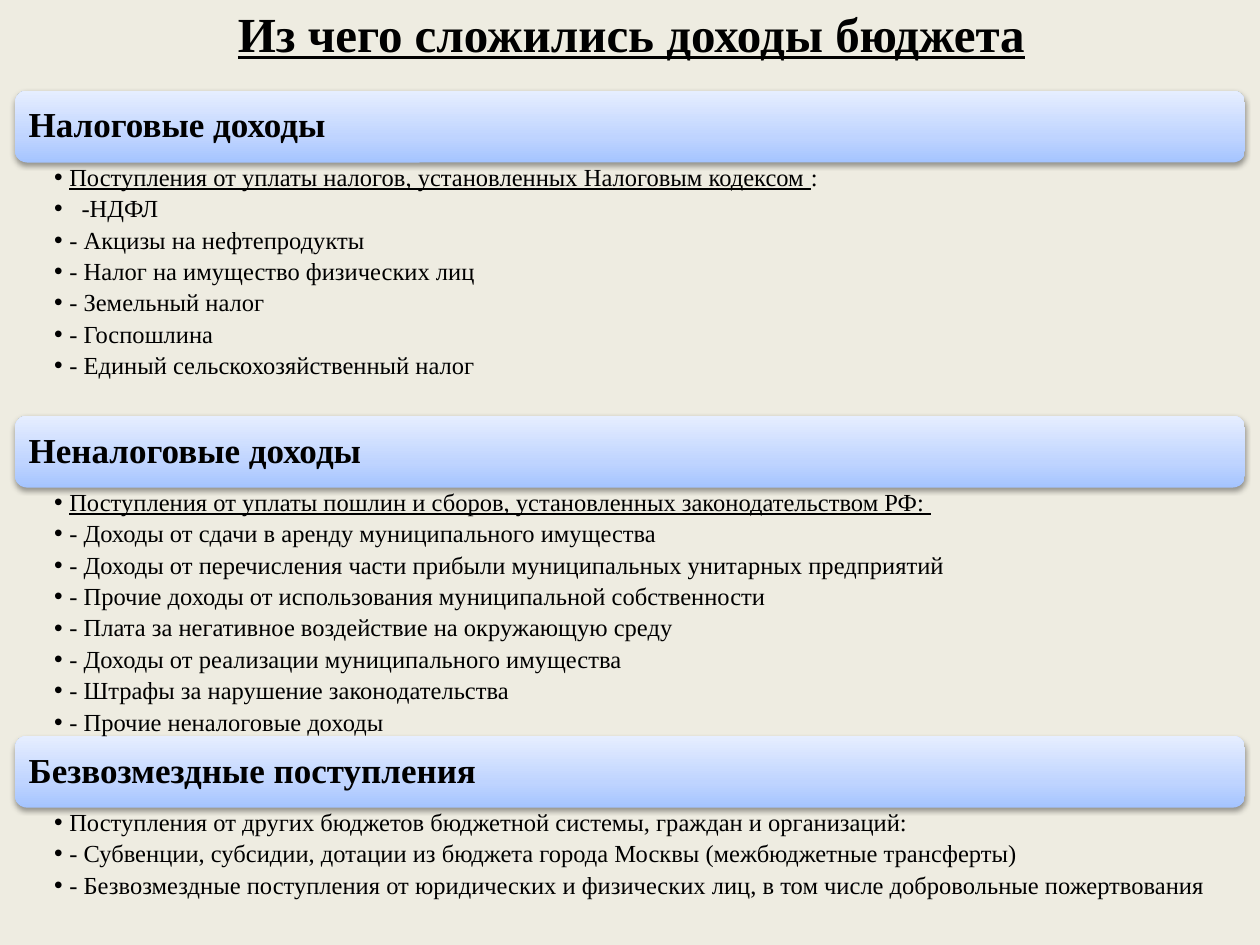
from copy import deepcopy
from dataclasses import dataclass

from lxml import etree
from pptx import Presentation
from pptx import util as u
from pptx.dml.color import RGBColor
from pptx.enum import shapes, text
from pptx.oxml.ns import qn

FONT = "Times New Roman"
LEFT, WIDTH, BAR_HEIGHT = 0.12, 9.76, 0.57
BAR_STOPS = [(0, "A4C4FF"), (0.35, "BFD4FF"), (1, "E6EEFF")]


@dataclass
class Section:
    heading: str
    top: float
    list_height: float
    lead: str
    items: list[str]
    lead_end: str = ""
    lead_underlined: bool = True


SECTIONS = [
    Section("Налоговые доходы", 0.72, 2.01,
            "Поступления от уплаты налогов, установленных Налоговым кодексом ",
            ["  -НДФЛ", "- Акцизы на нефтепродукты",
             "- Налог на имущество физических лиц", "- Земельный налог",
             "- Госпошлина", "- Единый сельскохозяйственный налог"],
            lead_end=":"),
    Section("Неналоговые доходы", 3.3, 1.96,
            "Поступления от уплаты пошлин и сборов, установленных законодательством РФ: ",
            ["- Доходы от сдачи в аренду муниципального имущества",
             "- Доходы от перечисления части прибыли муниципальных унитарных предприятий",
             "- Прочие доходы от использования муниципальной собственности",
             "- Плата за негативное воздействие на окружающую среду",
             "- Доходы от реализации муниципального имущества",
             "- Штрафы за нарушение законодательства",
             "- Прочие неналоговые доходы"]),
    Section("Безвозмездные поступления", 5.84, 1.0,
            "Поступления от других бюджетов бюджетной системы, граждан и организаций:",
            ["- Субвенции, субсидии, дотации из бюджета города Москвы (межбюджетные трансферты)",
             "- Безвозмездные поступления от юридических и физических лиц, "
             "в том числе добровольные пожертвования"],
            lead_underlined=False),
]


def color(value: str) -> RGBColor:
    return RGBColor.from_string(value)


def add_span(para, wording: str, size=14, bold=False, underline=False) -> None:
    span = para.add_run()
    span.text = wording
    span.font.name, span.font.size = FONT, u.Pt(size)
    span.font.bold, span.font.underline = bold, underline
    span.font.color.rgb = color("000000")


def place(box, left: float, top: float, width: float, height: float) -> None:
    box.left, box.top = u.Inches(left), u.Inches(top)
    box.width, box.height = u.Inches(width), u.Inches(height)


def set_frame(box, anchor, left: float, right: float, edge: float):
    frame = box.text_frame
    frame.word_wrap, frame.auto_size = True, text.MSO_AUTO_SIZE.NONE
    frame.vertical_anchor = anchor
    frame.margin_left, frame.margin_right = u.Inches(left), u.Inches(right)
    frame.margin_top = frame.margin_bottom = u.Inches(edge)
    return frame


def add_shadow(shape) -> None:
    shape.shadow.inherit = False
    effects = shape._element.spPr.find(qn("a:effectLst"))
    shadow = etree.SubElement(effects, qn("a:outerShdw"), blurRad="40000",
                              dist="20000", dir="5400000", rotWithShape="0")
    tint = etree.SubElement(shadow, qn("a:srgbClr"), val="000000")
    etree.SubElement(tint, qn("a:alpha"), val="38000")


def add_bar(page, section: Section) -> None:
    bar = page.shapes.add_shape(
        shapes.MSO_SHAPE.ROUNDED_RECTANGLE, u.Inches(LEFT), u.Inches(section.top),
        u.Inches(WIDTH), u.Inches(BAR_HEIGHT))
    bar.fill.gradient()
    bar.fill.gradient_angle = 90
    stops = bar._element.spPr.find(".//" + qn("a:gsLst"))
    stops.insert(1, deepcopy(stops[0]))
    for stop, (position, value) in zip(bar.fill.gradient_stops, BAR_STOPS):
        stop.position, stop.color.rgb = position, color(value)
    bar.line.fill.background()
    add_shadow(bar)
    para = set_frame(bar, text.MSO_ANCHOR.MIDDLE, 0.08, 0.08, 0.08).paragraphs[0]
    para.alignment, para.line_spacing = text.PP_ALIGN.LEFT, 0.9
    add_span(para, section.heading, size=20, bold=True)


def format_bullet(para) -> None:
    para.level, para.alignment = 1, text.PP_ALIGN.LEFT
    para.line_spacing, para.space_before, para.space_after = 0.9, u.Pt(0), u.Pt(2.8)
    props = para._p.get_or_add_pPr()
    props.set("marL", str(u.Inches(0.12)))
    props.set("indent", str(-u.Inches(0.12)))
    etree.SubElement(props, qn("a:buChar"), char="•")


def fill_list(box, section: Section) -> None:
    place(box, LEFT, section.top + BAR_HEIGHT, WIDTH, section.list_height)
    frame = set_frame(box, text.MSO_ANCHOR.TOP, 0.31, 0.11, 0.02)
    lead = frame.paragraphs[0]
    format_bullet(lead)
    add_span(lead, section.lead, underline=section.lead_underlined)
    if section.lead_end:
        add_span(lead, section.lead_end)
    for item in section.items:
        para = frame.add_paragraph()
        format_bullet(para)
        add_span(para, item)


def main() -> None:
    deck = Presentation()
    deck.slide_width, deck.slide_height = u.Inches(10), u.Inches(7.5)
    page = deck.slides.add_slide(deck.slide_layouts.get_by_name("Comparison"))
    page.background.fill.solid()
    page.background.fill.fore_color.rgb = color("EEECE1")

    title, *lists, spare = page.placeholders
    spare._element.getparent().remove(spare._element)
    place(title, 0.51, 0, 9, 0.52)
    para = set_frame(title, text.MSO_ANCHOR.MIDDLE, 0.1, 0.1, 0.05).paragraphs[0]
    para.alignment = text.PP_ALIGN.CENTER
    add_span(para, "Из чего сложились доходы бюджета", size=28, bold=True, underline=True)

    for section in SECTIONS:
        add_bar(page, section)
    for box, section in zip(lists, SECTIONS):
        fill_list(box, section)
        page.shapes._spTree.append(box._element)  # lists stay in front of the bars
    deck.save("out.pptx")


if __name__ == "__main__":
    main()
